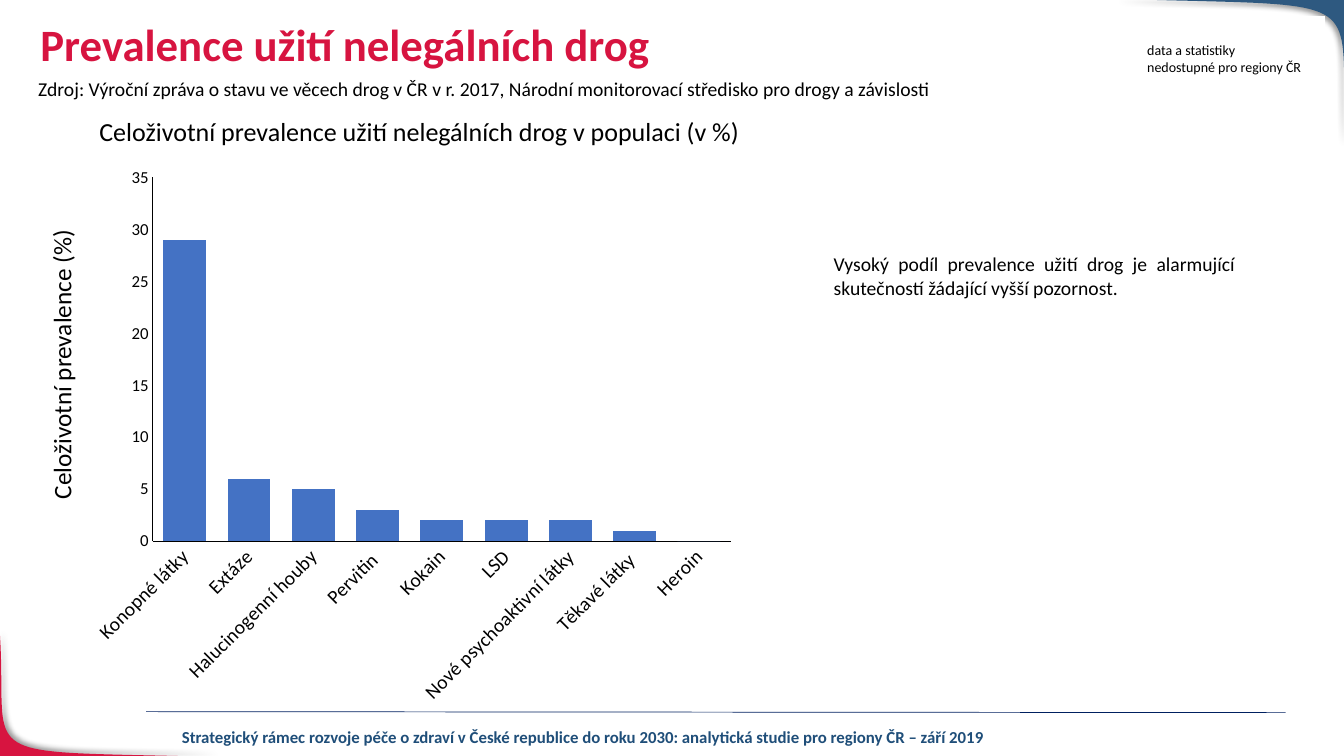
"""Build the slide on lifetime prevalence of illegal drug use."""
from lxml.etree import SubElement
from pptx import Presentation
from pptx.chart.data import CategoryChartData
from pptx.dml.color import RGBColor
from pptx.enum.chart import XL_CHART_TYPE, XL_TICK_MARK
from pptx.enum.shapes import MSO_CONNECTOR, MSO_SHAPE
from pptx.enum.text import MSO_ANCHOR, PP_ALIGN
from pptx.oxml import parse_xml
from pptx.oxml.ns import nsdecls, qn
from pptx.util import Inches, Pt

RED = RGBColor(0xD7, 0x14, 0x40)
STEEL = RGBColor(0x2E, 0x59, 0x80)
NAVY = RGBColor(0x00, 0x20, 0x60)
FOOTER = RGBColor(0x1F, 0x4E, 0x79)
BAR = RGBColor(0x44, 0x72, 0xC4)
BLACK = RGBColor(0, 0, 0)
WHITE = RGBColor(255, 255, 255)
FONT = "Calibri"


def set_font(font, size, color=BLACK, bold=False):
    font.name, font.size, font.bold = FONT, Pt(size), bold
    font.color.rgb = color


def add_text(box, lines, size, align=PP_ALIGN.LEFT, color=BLACK, bold=False, wrap=True):
    sp = s.shapes.add_textbox(*[Inches(v) for v in box])
    tf = sp.text_frame
    tf.word_wrap = wrap
    for i, line in enumerate(lines):
        p = tf.add_paragraph() if i else tf.paragraphs[0]
        p.alignment = align
        r = p.add_run()
        r.text = line
        set_font(r.font, size, color, bold)
    return sp


prs = Presentation()
prs.slide_width, prs.slide_height = Inches(13.33), Inches(7.5)
s = prs.slides.add_slide(prs.slide_layouts[5])

corners = [
    (RED, 315, [(2.13, 7.51), (-0.34, 7.44), (0.08, 7.59), (0, 6.3)], (-0.01, 7.51)),
    (STEEL, 135, [(11.11, -0.01), (13.7, 0.07), (13.26, -0.1), (13.35, 1.42)], (13.35, -0.01)),
]
for color, angle, curve, corner in corners:
    points = []
    for i in range(41):
        t = i / 40
        weights = ((1 - t) ** 3, 3 * t * (1 - t) ** 2, 3 * t ** 2 * (1 - t), t ** 3)
        points.append([Inches(sum(w * pt[k] for w, pt in zip(weights, curve))) for k in (0, 1)])
    points.append([Inches(v) for v in corner])
    fb = s.shapes.build_freeform(*points[0])
    fb.add_line_segments(points[1:], close=True)
    sp = fb.convert_to_shape()
    sp.fill.solid()
    sp.fill.fore_color.rgb = color
    sp.line.fill.background()
    sp._element.spPr.append(parse_xml(
        f'<a:effectLst {nsdecls("a")}><a:outerShdw blurRad="50800" dist="38100" '
        f'dir="{angle * 60000}" rotWithShape="0"><a:srgbClr val="000000">'
        '<a:alpha val="40000"/></a:srgbClr></a:outerShdw></a:effectLst>'))

rule = s.shapes.add_connector(MSO_CONNECTOR.STRAIGHT, Inches(1.45), Inches(7.06),
                              Inches(12.75), Inches(7.07))
rule.line.color.rgb = NAVY
rule.line.width = Pt(0.5)
SubElement(rule._element.spPr, qn("a:effectLst"))

add_text((1.57, 7.16, 8.43, 0.3),
         ["Strategický rámec rozvoje péče o zdraví v České republice do roku 2030: "
          "analytická studie pro regiony ČR – září 2019"],
         12, PP_ALIGN.CENTER, FOOTER, bold=True)
add_text((0.28, 0.71, 9.13, 0.34),
         ["Zdroj: Výroční zpráva o stavu ve věcech drog v ČR v r. 2017, "
          "Národní monitorovací středisko pro drogy a závislosti"], 14, wrap=False)

prevalence = {
    "Konopné látky": 29, "Extáze": 6, "Halucinogenní houby": 5,
    "Pervitin ": 3, "Kokain": 2, "LSD": 2, "Nové psychoaktivní látky": 2,
    "Těkavé látky ": 1, "Heroin": 0,
}
data = CategoryChartData()
data.categories = list(prevalence)
data.add_series("Series 1", list(prevalence.values()))
chart = s.shapes.add_chart(XL_CHART_TYPE.COLUMN_CLUSTERED, Inches(0.81), Inches(1.55),
                           Inches(6.58), Inches(5.55), data).chart
chart.has_legend = False
chart.has_title = False
set_font(chart.font, 10)
plot = chart.plots[0]
plot.gap_width, plot.overlap, plot.vary_by_categories = 50, -27, False
fill = plot.series[0].format.fill
fill.solid()
fill.fore_color.rgb = BAR
for axis, size in ((chart.category_axis, 14), (chart.value_axis, 12)):
    set_font(axis.tick_labels.font, size)
    axis.has_major_gridlines = False
    axis.major_tick_mark = axis.minor_tick_mark = XL_TICK_MARK.NONE
    axis.format.line.color.rgb = BLACK
    axis.format.line.width = Pt(0.75)
chart.category_axis._element.find(qn("c:txPr")).find(qn("a:bodyPr")).set("rot", "-2700000")
values = chart.value_axis
values.minimum_scale, values.maximum_scale, values.major_unit = 0, 35, 5
values.tick_labels.number_format = "0"
values.tick_labels.number_format_is_linked = False
plot_area = chart._chartSpace.chart.plotArea
for old in plot_area.findall(qn("c:layout")):
    plot_area.remove(old)
plot_area.insert(0, parse_xml(
    f'<c:layout {nsdecls("c")}><c:manualLayout><c:layoutTarget val="inner"/>'
    '<c:xMode val="edge"/><c:yMode val="edge"/><c:x val="0.107"/><c:y val="0.038"/>'
    '<c:w val="0.872"/><c:h val="0.65"/></c:manualLayout></c:layout>'))

axis_title = add_text((-0.84, 3.4, 2.9, 0.4), ["Celoživotní prevalence (%)"], 18, wrap=False)
axis_title.rotation = 270
add_text((0.16, 1.1, 8, 0.41),
         ["Celoživotní prevalence užití nelegálních drog v populaci (v %)"],
         18.6, PP_ALIGN.CENTER)

title = s.shapes.title
title.left, title.top, title.width, title.height = [Inches(v) for v in (0.3, 0.12, 11.5, 0.69)]
tf = title.text_frame
tf.word_wrap = True
tf.vertical_anchor = MSO_ANCHOR.MIDDLE
p = tf.paragraphs[0]
p.alignment, p.line_spacing = PP_ALIGN.LEFT, 0.9
r = p.add_run()
r.text = "Prevalence užití nelegálních drog"
set_font(r.font, 32, RED, bold=True)

add_text((8.17, 2.45, 4.18, 3.57),
         ["Vysoký podíl prevalence užití drog je alarmující skutečností "
          "žádající vyšší pozornost."], 14, PP_ALIGN.JUSTIFY)

panel = s.shapes.add_shape(MSO_SHAPE.RECTANGLE, Inches(11), Inches(0.16),
                           Inches(2.14), Inches(0.61))
panel.shadow.inherit = False
panel.fill.solid()
panel.fill.fore_color.rgb = WHITE
panel.line.fill.background()
add_text((11.28, 0.36, 2.05, 0.44), ["data a statistiky", "nedostupné pro regiony ČR"], 10)

prs.save("out.pptx")
